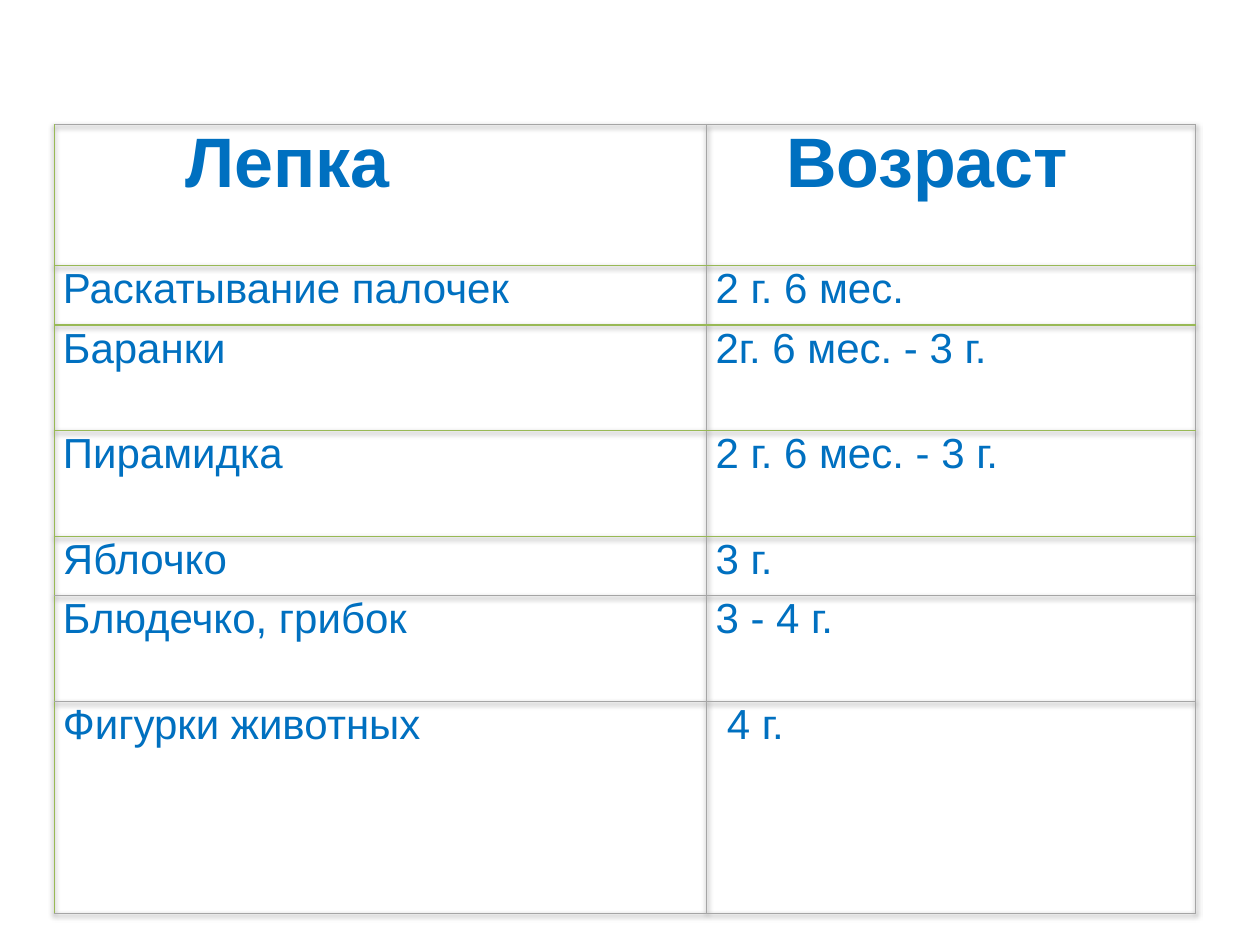
from lxml.etree import SubElement
from pptx import Presentation
from pptx.dml.color import RGBColor
from pptx.oxml import parse_xml
from pptx.oxml.ns import nsdecls, qn
from pptx.util import Inches, Pt

BLUE, GREEN, GREY = "0070C0", "98B955", "A5A5A5"
COLUMN_WIDTHS = [5.18, 3.88]
ROW_HEIGHTS = [1.12, 0.47, 0.84, 0.84, 0.47, 0.84, 1.68]
RULE_COLORS = [GREY] + [GREEN] * 4 + [GREY] * 3
SIDE_COLORS = [GREEN, GREY, GREY]
SKILLS = [
    ("Лепка", "Возраст"),
    ("Раскатывание палочек", "2 г. 6 мес."),
    ("Баранки", "2г. 6 мес. - 3 г."),
    ("Пирамидка", "2 г. 6 мес. - 3 г."),
    ("Яблочко", "3 г."),
    ("Блюдечко, грибок", "3 - 4 г."),
    ("Фигурки животных", "4 г."),
]
INDENTS = {(0, 0): 0.97, (0, 1): 0.56, (6, 1): 0.09}


def rgb(value):
    """Turn a hex string into a colour."""
    return RGBColor.from_string(value)


def write_text(cell, text, size=24, bold=False, color=BLUE, indent=0):
    """Write formatted text into a table cell."""
    cell.margin_left = Inches(0.07 + indent)
    cell.margin_right = Inches(0.07)
    cell.margin_top = cell.margin_bottom = 0
    run = cell.text_frame.paragraphs[0].add_run()
    run.text = text
    run.font.name = "Arial"
    run.font.size = Pt(size)
    run.font.bold = bold
    run.font.color.rgb = rgb(color)


def draw_borders(cell, **colors):
    """Draw the cell's edges in the order left, right, top, bottom."""
    properties = cell._tc.get_or_add_tcPr()
    for position, (edge, color) in enumerate(colors.items()):
        line = parse_xml(f'<a:{edge} {nsdecls("a")} w="{Pt(0.75)}"/>')
        fill = SubElement(line, qn("a:solidFill"))
        SubElement(fill, qn("a:srgbClr")).set("val", color)
        properties.insert(position, line)


def add_shadow(table):
    """Give the table a soft shadow below its lines."""
    table._tbl.tblPr.insert(0, parse_xml(
        f'<a:effectLst {nsdecls("a")}>'
        '<a:outerShdw blurRad="40000" dist="20000" dir="5400000" rotWithShape="0">'
        '<a:srgbClr val="000000"><a:alpha val="38000"/></a:srgbClr>'
        '</a:outerShdw></a:effectLst>'))


def add_skill_table(slide):
    """Add the table of modelling skills by age."""
    table = slide.shapes.add_table(
        len(ROW_HEIGHTS), len(COLUMN_WIDTHS), Inches(0.43), Inches(0.99),
        Inches(sum(COLUMN_WIDTHS)), Inches(sum(ROW_HEIGHTS))).table
    table.horz_banding = False
    add_shadow(table)
    for column, width in zip(table.columns, COLUMN_WIDTHS):
        column.width = Inches(width)
    for r, (row, height) in enumerate(zip(table.rows, ROW_HEIGHTS)):
        row.height = Inches(height)
        for c, cell in enumerate(row.cells):
            header = r == 0
            write_text(cell, SKILLS[r][c], size=40 if header else 24,
                       bold=header, indent=INDENTS.get((r, c), 0))
            cell.fill.background()
            draw_borders(cell, lnL=SIDE_COLORS[c], lnR=SIDE_COLORS[c + 1],
                         lnT=RULE_COLORS[r], lnB=RULE_COLORS[r + 1])


def main():
    """Build and save the slide."""
    deck = Presentation()
    deck.slide_width, deck.slide_height = Inches(10), Inches(7.5)
    add_skill_table(deck.slides.add_slide(deck.slide_layouts[6]))
    deck.save("out.pptx")


if __name__ == "__main__":
    main()
